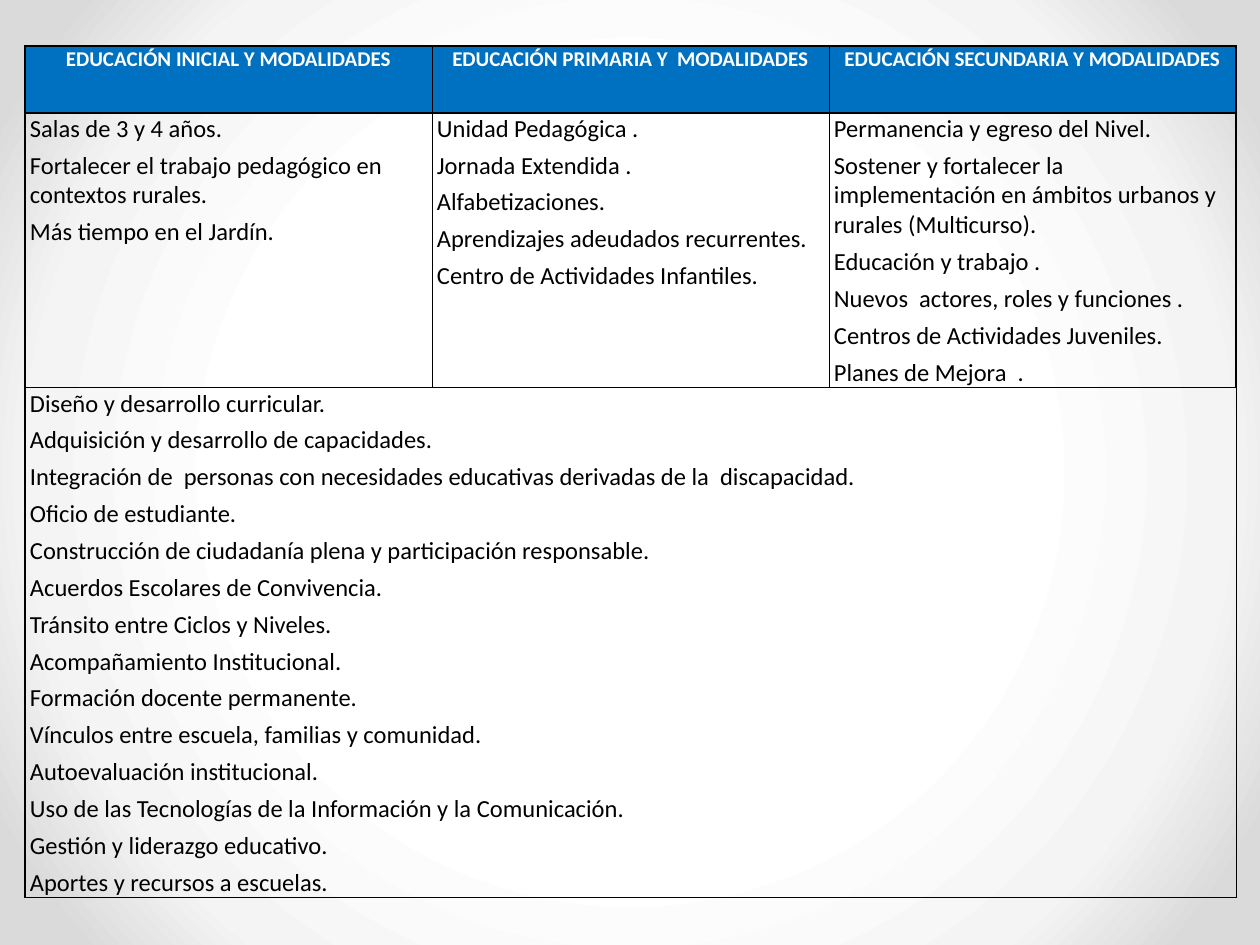
from dataclasses import dataclass

from lxml.etree import SubElement
from pptx import Presentation
from pptx.dml.color import RGBColor
from pptx.enum.text import PP_ALIGN
from pptx.oxml import parse_xml
from pptx.oxml.ns import nsdecls, qn
from pptx.util import Emu, Pt

PX_PER_INCH = 126
SIDES = ("L", "R", "T", "B")
THICK, THIN = 1, 0.5

COLUMN_WIDTHS = (407, 397, 407)
ROW_HEIGHTS = (67, 274, 509)


@dataclass
class CellStyle:
    size: int
    color: str
    bold: bool = False
    align: PP_ALIGN = PP_ALIGN.LEFT
    fill: str | None = None


HEADER = CellStyle(12, "FFFFFF", True, PP_ALIGN.CENTER, "0070C0")
BODY = CellStyle(14, "000000")

LEVELS = (
    "EDUCACIÓN INICIAL Y MODALIDADES",
    "EDUCACIÓN PRIMARIA Y  MODALIDADES",
    "EDUCACIÓN SECUNDARIA Y MODALIDADES",
)
LEVEL_TOPICS = (
    (
        "Salas de 3 y 4 años.",
        "Fortalecer el trabajo pedagógico en contextos rurales.",
        "Más tiempo en el Jardín.",
    ),
    (
        "Unidad Pedagógica .",
        "Jornada Extendida .",
        "Alfabetizaciones.",
        "Aprendizajes adeudados recurrentes.",
        "Centro de Actividades Infantiles.",
    ),
    (
        "Permanencia y egreso del Nivel.",
        "Sostener y fortalecer la implementación en ámbitos urbanos y rurales (Multicurso).",
        "Educación y trabajo .",
        "Nuevos  actores, roles y funciones .",
        "Centros de Actividades Juveniles.",
        "Planes de Mejora  .",
    ),
)
SHARED_TOPICS = (
    "Diseño y desarrollo curricular.",
    "Adquisición y desarrollo de capacidades.",
    "Integración de  personas con necesidades educativas derivadas de la  discapacidad.",
    "Oficio de estudiante.",
    "Construcción de ciudadanía plena y participación responsable.",
    "Acuerdos Escolares de Convivencia.",
    "Tránsito entre Ciclos y Niveles.",
    "Acompañamiento Institucional.",
    "Formación docente permanente.",
    "Vínculos entre escuela, familias y comunidad.",
    "Autoevaluación institucional.",
    "Uso de las Tecnologías de la Información y la Comunicación.",
    "Gestión y liderazgo educativo.",
    "Aportes y recursos a escuelas.",
)
JUSTIFIED_TOPICS = (9, 11, 12, 13)


def px(length: int) -> Emu:
    return Emu(round(length * 914400 / PX_PER_INCH))


def rgb(value: str) -> RGBColor:
    return RGBColor.from_string(value)


def set_background(page) -> None:
    """Radial gradient, white in the centre and grey at the corners."""
    stops = "".join(
        f'<a:gs pos="{position}000"><a:srgbClr val="{color}"/></a:gs>'
        for position, color in ((50, "FFFFFF"), (76, "F4F4F4"), (92, "DADADA"))
    )
    background = parse_xml(
        f'<p:bg {nsdecls("p", "a")}><p:bgPr><a:gradFill rotWithShape="1">'
        f'<a:gsLst>{stops}</a:gsLst><a:path path="circle">'
        '<a:fillToRect l="50000" t="50000" r="50000" b="50000"/></a:path>'
        "</a:gradFill><a:effectLst/></p:bgPr></p:bg>"
    )
    page.element.cSld.insert(0, background)


def set_borders(cell, row: int, column: int) -> None:
    """Thick lines around the table and under the header, thin ones inside."""
    thick = {
        "L": column == 0,
        "R": column == len(COLUMN_WIDTHS) - 1,
        "T": row <= 1,
        "B": row in (0, len(ROW_HEIGHTS) - 1),
    }
    properties = cell._tc.get_or_add_tcPr()
    for index, side in enumerate(SIDES):
        width = Pt(THICK if thick[side] else THIN)
        line = parse_xml(
            f'<a:ln{side} {nsdecls("a")} w="{width}"><a:solidFill>'
            f'<a:srgbClr val="000000"/></a:solidFill></a:ln{side}>'
        )
        properties.insert(index, line)


def fill_cell(cell, lines: tuple[str, ...], style: CellStyle) -> None:
    cell.margin_left = cell.margin_right = px(5)
    cell.margin_top, cell.margin_bottom = px(1), 0
    if style.fill:
        cell.fill.solid()
        cell.fill.fore_color.rgb = rgb(style.fill)
    else:
        cell.fill.background()
    cell.text_frame.text = "\n".join(lines)
    for index, para in enumerate(cell.text_frame.paragraphs):
        para.alignment = style.align
        para.space_before = Pt(2 if index else 0)
        para.space_after = Pt(2)
        for span in para.runs:
            span.font.name = "Calibri"
            span.font.size = Pt(style.size)
            span.font.bold = style.bold
            span.font.color.rgb = rgb(style.color)


def add_levels_table(page) -> None:
    table = page.shapes.add_table(
        len(ROW_HEIGHTS), len(COLUMN_WIDTHS), px(25), px(46),
        px(sum(COLUMN_WIDTHS)), px(sum(ROW_HEIGHTS)),
    ).table
    table.first_row = table.horz_banding = False
    for column, width in zip(table.columns, COLUMN_WIDTHS):
        column.width = px(width)
    for row, height in zip(table.rows, ROW_HEIGHTS):
        row.height = px(height)

    # Header and topics of each level
    for column, (level, topics) in enumerate(zip(LEVELS, LEVEL_TOPICS)):
        fill_cell(table.cell(0, column), (level,), HEADER)
        fill_cell(table.cell(1, column), topics, BODY)

    # Topics shared by all levels
    shared = table.cell(2, 0)
    shared.merge(table.cell(2, len(COLUMN_WIDTHS) - 1))
    fill_cell(shared, SHARED_TOPICS, BODY)
    for index in JUSTIFIED_TOPICS:
        shared.text_frame.paragraphs[index].alignment = PP_ALIGN.JUSTIFY
    for column in range(1, len(COLUMN_WIDTHS)):
        table.cell(2, column).fill.background()

    for row in range(len(ROW_HEIGHTS)):
        for column in range(len(COLUMN_WIDTHS)):
            set_borders(table.cell(row, column), row, column)


def main() -> None:
    deck = Presentation()
    deck.slide_width, deck.slide_height = px(1260), px(945)
    page = deck.slides.add_slide(deck.slide_layouts[6])
    set_background(page)
    add_levels_table(page)
    deck.save("out.pptx")


if __name__ == "__main__":
    main()
